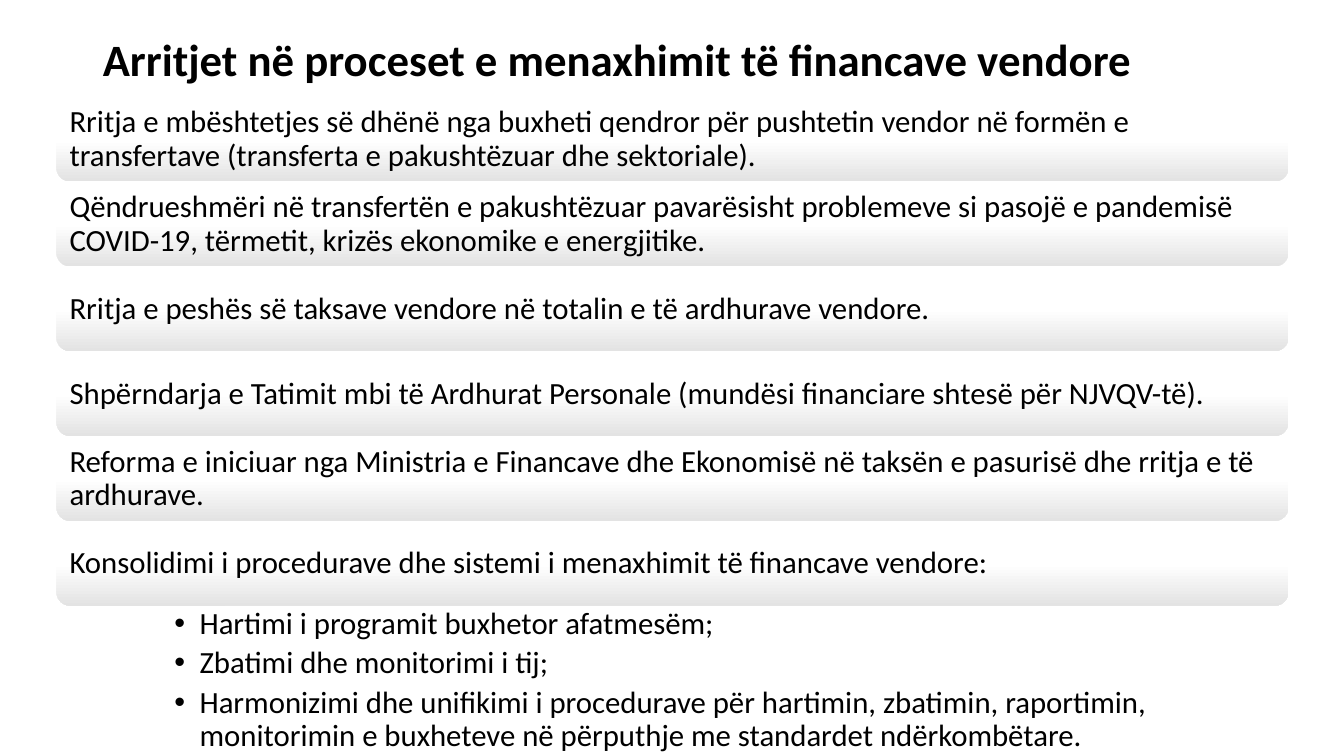
import pptx
import pptx.util
import pptx.dml.color
import pptx.enum.shapes
import pptx.enum.text

Inches = pptx.util.Inches
Pt = pptx.util.Pt
COLORS = {"text": "000000", "bar_top": "FFFFFF", "bar_bottom": "E3E3E3"}


def rgb(name):
    return pptx.dml.color.RGBColor.from_string(COLORS[name])


def write(text, *, paragraph, size=22, bold=False, after=0):
    """Put formatted, left-aligned text into a paragraph."""
    paragraph.alignment = pptx.enum.text.PP_ALIGN.LEFT
    paragraph.line_spacing = 0.9
    paragraph.space_before = Pt(0)
    paragraph.space_after = Pt(after)
    run = paragraph.add_run()
    run.text = text
    run.font.name = "Calibri"
    run.font.size = Pt(size)
    run.font.bold = bold
    run.font.color.rgb = rgb("text")


presentation = pptx.Presentation()
presentation.slide_width = Inches(13.33)
presentation.slide_height = Inches(7.5)
slide = presentation.slides.add_slide(presentation.slide_layouts[1])

# Heading
heading = slide.shapes.title
heading.left, heading.top = Inches(0.92), Inches(0.26)
heading.width, heading.height = Inches(11.5), Inches(0.71)
heading.text_frame.auto_size = pptx.enum.text.MSO_AUTO_SIZE.NONE
heading.text_frame.vertical_anchor = pptx.enum.text.MSO_ANCHOR.MIDDLE
write("Arritjet në proceset e menaxhimit të financave vendore",
      paragraph=heading.text_frame.paragraphs[0], size=32, bold=True)

# Achievement bars, evenly spaced
achievements = [
    "Rritja e mbështetjes së dhënë nga buxheti qendror për pushtetin vendor në formën e "
    "transfertave (transferta e pakushtëzuar dhe sektoriale).",
    "Qëndrueshmëri në transfertën e pakushtëzuar pavarësisht problemeve si pasojë e pandemisë "
    "COVID-19, tërmetit, krizës ekonomike e energjitike.",
    "Rritja e peshës së taksave vendore në totalin e të ardhurave vendore.",
    "Shpërndarja e Tatimit mbi të Ardhurat Personale (mundësi financiare shtesë për NJVQV-të).",
    "Reforma e iniciuar nga Ministria e Financave dhe Ekonomisë në taksën e pasurisë dhe "
    "rritja e të ardhurave.",
    "Konsolidimi i procedurave dhe sistemi i menaxhimit të financave vendore:",
]
first_top, last_top = 0.97, 5.18
pitch = (last_top - first_top) / (len(achievements) - 1)
for index, achievement in enumerate(achievements):
    bar = slide.shapes.add_shape(
        pptx.enum.shapes.MSO_SHAPE.ROUNDED_RECTANGLE,
        Inches(0.56), Inches(first_top + index * pitch), Inches(12.22), Inches(0.83))
    bar.shadow.inherit = False
    bar.line.fill.background()
    bar.fill.gradient()
    bar.fill.gradient_angle = 270
    for stop, position, color in zip(bar.fill.gradient_stops, (0.5, 1), ("bar_top", "bar_bottom")):
        stop.position = position
        stop.color.rgb = rgb(color)
    frame = bar.text_frame
    frame.word_wrap = True
    frame.vertical_anchor = pptx.enum.text.MSO_ANCHOR.MIDDLE
    frame.margin_left = frame.margin_right = Inches(0.09)
    frame.margin_top = frame.margin_bottom = Inches(0.09)
    write(achievement, paragraph=frame.paragraphs[0], after=7.7)

# Procedures under the last bar
procedures = [
    "Hartimi i programit buxhetor afatmesëm;",
    "Zbatimi dhe monitorimi i tij;",
    "Harmonizimi dhe unifikimi i procedurave për hartimin, zbatimin, raportimin, "
    "monitorimin e buxheteve në përputhje me standardet ndërkombëtare.",
]
details = slide.placeholders[1]
details.left, details.top = Inches(1.37), Inches(6)
details.width, details.height = Inches(10.59), Inches(1.35)
frame = details.text_frame
frame.auto_size = pptx.enum.text.MSO_AUTO_SIZE.NONE
frame.vertical_anchor = pptx.enum.text.MSO_ANCHOR.TOP
frame.margin_left, frame.margin_right = Inches(0.36), Inches(0.17)
frame.margin_top = frame.margin_bottom = Inches(0.03)
for index, procedure in enumerate(procedures):
    paragraph = frame.add_paragraph() if index else frame.paragraphs[0]
    write(procedure, paragraph=paragraph, after=4.4)
    # Hanging indent for the bullet
    properties = paragraph._p.get_or_add_pPr()
    properties.set("marL", str(Inches(0.25)))
    properties.set("indent", str(-Inches(0.25)))

presentation.save("out.pptx")
